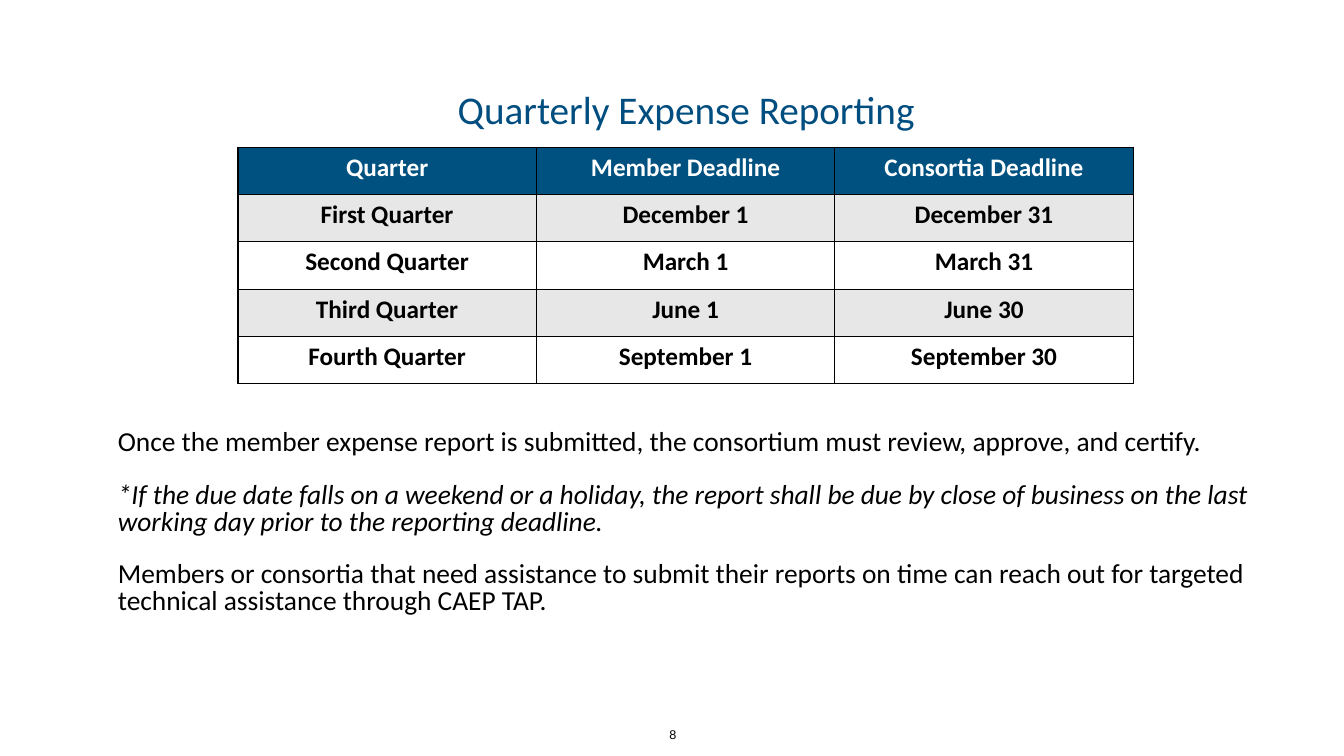
import dataclasses

import lxml.etree
import pptx
import pptx.dml.color
import pptx.enum.text
import pptx.oxml.ns
import pptx.util

ALIGN = pptx.enum.text.PP_ALIGN
ANCHOR = pptx.enum.text.MSO_ANCHOR
PX = 9144  # 100 px to the inch


@dataclasses.dataclass(frozen=True)
class Theme:
    font: str = "Calibri"
    plain: str = "Arial"
    title: str = "004D80"
    head: str = "005180"
    band: str = "E7E7E7"
    white: str = "FFFFFF"
    black: str = "000000"
    title_pt: float = 28
    body_pt: float = 19.6
    cell_pt: float = 18
    page_pt: float = 9


def px(num):
    return pptx.util.Emu(num * PX)


def rgb(code):
    return pptx.dml.color.RGBColor.from_string(code)


def write(para, text, *, size, color, font, bold=False, italic=False,
          align=ALIGN.LEFT, line=None, before=None):
    """Put one formatted run into a paragraph."""
    para.alignment = align
    if line is not None:
        para.line_spacing = line
    if before is not None:
        para.space_before = pptx.util.Pt(before)
    run = para.add_run()
    run.text = text
    run.font.size = pptx.util.Pt(size)
    run.font.name = font
    run.font.bold = bold
    run.font.italic = italic
    run.font.color.rgb = rgb(color)


def frame(cell, color):
    """Draw a 1 pt line on all four sides of a table cell."""
    props = cell._tc.get_or_add_tcPr()
    qn = pptx.oxml.ns.qn
    for spot, side in enumerate("LRTB"):
        edge = lxml.etree.Element(qn(f"a:ln{side}"), w=str(pptx.util.Pt(1)))
        fill = lxml.etree.SubElement(edge, qn("a:solidFill"))
        lxml.etree.SubElement(fill, qn("a:srgbClr"), val=color)
        props.insert(spot, edge)


class Deck:
    def __init__(self, theme):
        self.theme = theme
        self.file = pptx.Presentation()
        self.file.slide_width = px(1333)
        self.file.slide_height = px(750)
        self.slide = self.file.slides.add_slide(self.file.slide_layouts[6])

    def text(self, box, parts, anchor=ANCHOR.MIDDLE, wrap=True, gap=0, **style):
        """Add a text box; parts are pairs of text and extra format."""
        body = self.slide.shapes.add_textbox(*map(px, box)).text_frame
        body.word_wrap = wrap
        body.vertical_anchor = anchor
        body.margin_left = body.margin_right = px(6)
        body.margin_top = body.margin_bottom = px(6)
        for num, (text, extra) in enumerate(parts):
            para = body.add_paragraph() if num else body.paragraphs[0]
            write(para, text, before=gap if num else None, **style, **extra)

    def table(self, left, top, wide, high, rows):
        """Add a table with a header row and cells of equal size."""
        theme = self.theme
        count = len(rows[0])
        grid = self.slide.shapes.add_table(
            len(rows), count, px(left), px(top),
            px(wide * count), px(high * len(rows))).table
        grid.horz_banding = False
        for col in grid.columns:
            col.width = px(wide)
        for r, row in enumerate(rows):
            grid.rows[r].height = px(high)
            shade = theme.band if r % 2 else theme.white
            for c, text in enumerate(row):
                cell = grid.cell(r, c)
                cell.fill.solid()
                cell.fill.fore_color.rgb = rgb(shade if r else theme.head)
                frame(cell, theme.black)
                write(cell.text_frame.paragraphs[0], text, bold=True,
                      size=theme.cell_pt, font=theme.font, align=ALIGN.CENTER,
                      color=theme.black if r else theme.white)


def main():
    theme = Theme()
    deck = Deck(theme)
    deck.text((264, 72, 833, 71), [("Quarterly Expense Reporting", {})],
              size=theme.title_pt, color=theme.title, font=theme.font,
              align=ALIGN.CENTER)
    deck.table(236, 146, 296, 47, [
        ("Quarter", "Member Deadline", "Consortia Deadline"),
        ("First Quarter", "December 1", "December 31"),
        ("Second Quarter", "March 1", "March 31"),
        ("Third Quarter", "June 1", "June 30"),
        ("Fourth Quarter", "September 1", "September 30"),
    ])
    deck.text((111, 410, 1140, 218), [
        ("Once the member expense report is submitted, the consortium must "
         "review, approve, and certify.", {}),
        ("*If the due date falls on a weekend or a holiday, the report shall "
         "be due by close of business on the last working day prior to the "
         "reporting deadline.", {"italic": True}),
        ("Members or consortia that need assistance to submit their reports "
         "on time can reach out for targeted technical assistance through "
         "CAEP TAP.", {}),
    ], size=theme.body_pt, color=theme.black, font=theme.font, line=0.8, gap=19)
    deck.text((654, 715, 27, 26), [("8", {})], anchor=ANCHOR.TOP, wrap=False,
              size=theme.page_pt, color=theme.black, font=theme.plain,
              align=ALIGN.CENTER)
    deck.file.save("out.pptx")


if __name__ == "__main__":
    main()
